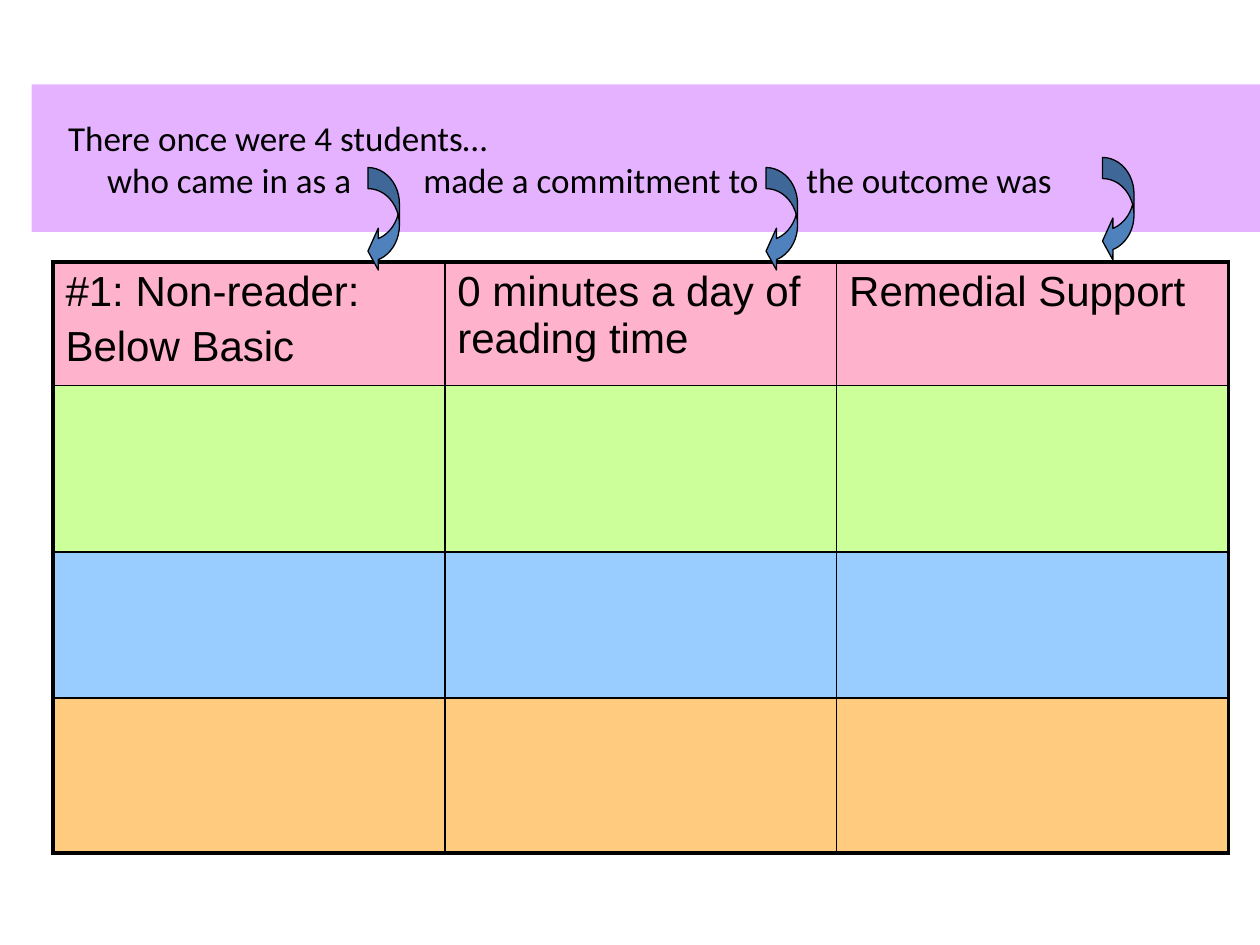
from lxml.etree import SubElement
from pptx import Presentation
from pptx.dml.color import RGBColor
from pptx.enum.shapes import MSO_SHAPE
from pptx.enum.text import MSO_ANCHOR, PP_ALIGN
from pptx.oxml.ns import qn
from pptx.util import Inches, Pt

BLACK = RGBColor(0x00, 0x00, 0x00)
LILAC = RGBColor(0xCC, 0x66, 0xFF)
PINK = RGBColor(0xFF, 0x66, 0x99)
GREEN = RGBColor(0xCC, 0xFF, 0x99)
SKY = RGBColor(0x99, 0xCC, 0xFF)
ORANGE = RGBColor(0xFF, 0x99, 0x00)
BLUE = RGBColor(0x4F, 0x81, 0xBD)

STORY_LINES = [
    "There once were 4 students…",
    "\twho came in as a\tmade a commitment to\tthe outcome was",
]
STORY_TABS = [0.31, 2.82, 5.86]
HEADINGS = [
    ["#1: Non-reader:", "Below Basic"],
    ["0 minutes a day of reading time"],
    ["Remedial Support"],
]
ROWS = [(0.98, PINK, 50), (1.32, GREEN, 100), (1.16, SKY, 100), (1.23, ORANGE, 50)]
COLUMN_WIDTH = 3.11
ARROWS = [(2.92, 1.33), (6.08, 1.33), (8.75, 1.25)]
STORY_FONT = {"name": "Calibri", "size": Pt(20), "bold": False}
TABLE_FONT = {"name": "Arial", "size": Pt(24), "bold": False}


def apply_format(target, values):
    for name, value in values.items():
        setattr(target, name, value)


def set_fill(fill, properties, color, opacity):
    fill.solid()
    fill.fore_color.rgb = color
    if opacity < 100:
        color_element = properties.find(f"{qn('a:solidFill')}/{qn('a:srgbClr')}")
        SubElement(color_element, qn("a:alpha"), val=str(opacity * 1000))


def write_paragraphs(text_frame, lines, font, layout):
    text_frame.text = "\n".join(lines)
    for paragraph in text_frame.paragraphs:
        apply_format(paragraph, layout)
        apply_format(paragraph.font, font)
        for run in paragraph.runs:
            apply_format(run.font, font)
            run.font.color.rgb = BLACK


def add_tab_stops(paragraph, positions):
    tab_list = SubElement(paragraph._p.get_or_add_pPr(), qn("a:tabLst"))
    for position in positions:
        SubElement(tab_list, qn("a:tab"), pos=str(Inches(position)), algn="l")


def add_story_banner(slide):
    shape = slide.shapes.add_shape(
        MSO_SHAPE.RECTANGLE, Inches(0.25), Inches(0.67), Inches(9.75), Inches(1.17)
    )
    shape.shadow.inherit = False
    shape.line.fill.background()
    set_fill(shape.fill, shape._element.spPr, LILAC, 50)
    text_frame = shape.text_frame
    apply_format(text_frame, {
        "word_wrap": True,
        "vertical_anchor": MSO_ANCHOR.MIDDLE,
        "margin_left": Inches(0.29),
    })
    write_paragraphs(text_frame, STORY_LINES, STORY_FONT, {"alignment": PP_ALIGN.LEFT})
    paragraph = text_frame.paragraphs[1]
    paragraph.font.size = None
    properties = paragraph._p.get_or_add_pPr()
    for default in properties.findall(qn("a:defRPr")):
        properties.remove(default)
    add_tab_stops(paragraph, STORY_TABS)


def set_borders(cell, outer_edges):
    properties = cell._tc.get_or_add_tcPr()
    for side, is_outer in outer_edges.items():
        width = Pt(2.25 if is_outer else 1)
        line = SubElement(properties, qn(f"a:ln{side}"), w=str(width))
        solid = SubElement(line, qn("a:solidFill"))
        SubElement(solid, qn("a:srgbClr"), val=str(BLACK))


def add_student_table(slide):
    row_count, column_count = len(ROWS), len(HEADINGS)
    table = slide.shapes.add_table(
        row_count, column_count, Inches(0.42), Inches(2.08),
        Inches(COLUMN_WIDTH * column_count), Inches(sum(row[0] for row in ROWS)),
    ).table
    apply_format(table, {"first_row": False, "horz_banding": False})
    for column in table.columns:
        column.width = Inches(COLUMN_WIDTH)
    for row_index, (height, color, opacity) in enumerate(ROWS):
        table.rows[row_index].height = Inches(height)
        for column_index, heading in enumerate(HEADINGS):
            cell = table.cell(row_index, column_index)
            set_borders(cell, {
                "L": column_index == 0,
                "R": column_index == column_count - 1,
                "T": row_index == 0,
                "B": row_index == row_count - 1,
            })
            set_fill(cell.fill, cell._tc.get_or_add_tcPr(), color, opacity)
            if row_index == 0:
                write_paragraphs(
                    cell.text_frame, heading, TABLE_FONT, {"space_before": Pt(4.8)}
                )


def add_curved_arrow(slide, left, top):
    shape = slide.shapes.add_shape(
        MSO_SHAPE.CURVED_LEFT_ARROW, Inches(left), Inches(top), Inches(0.25), Inches(0.83)
    )
    shape.shadow.inherit = False
    for index, value in enumerate([0.67, 1.33, 0.33]):
        shape.adjustments[index] = value
    set_fill(shape.fill, shape._element.spPr, BLUE, 100)
    shape.line.color.rgb = BLACK
    shape.line.width = Pt(0.75)


def main():
    presentation = Presentation()
    presentation.slide_width = Inches(10)
    presentation.slide_height = Inches(7.5)
    slide = presentation.slides.add_slide(presentation.slide_layouts[6])
    add_story_banner(slide)
    add_student_table(slide)
    for left, top in ARROWS:
        add_curved_arrow(slide, left, top)
    presentation.save("out.pptx")


if __name__ == "__main__":
    main()
